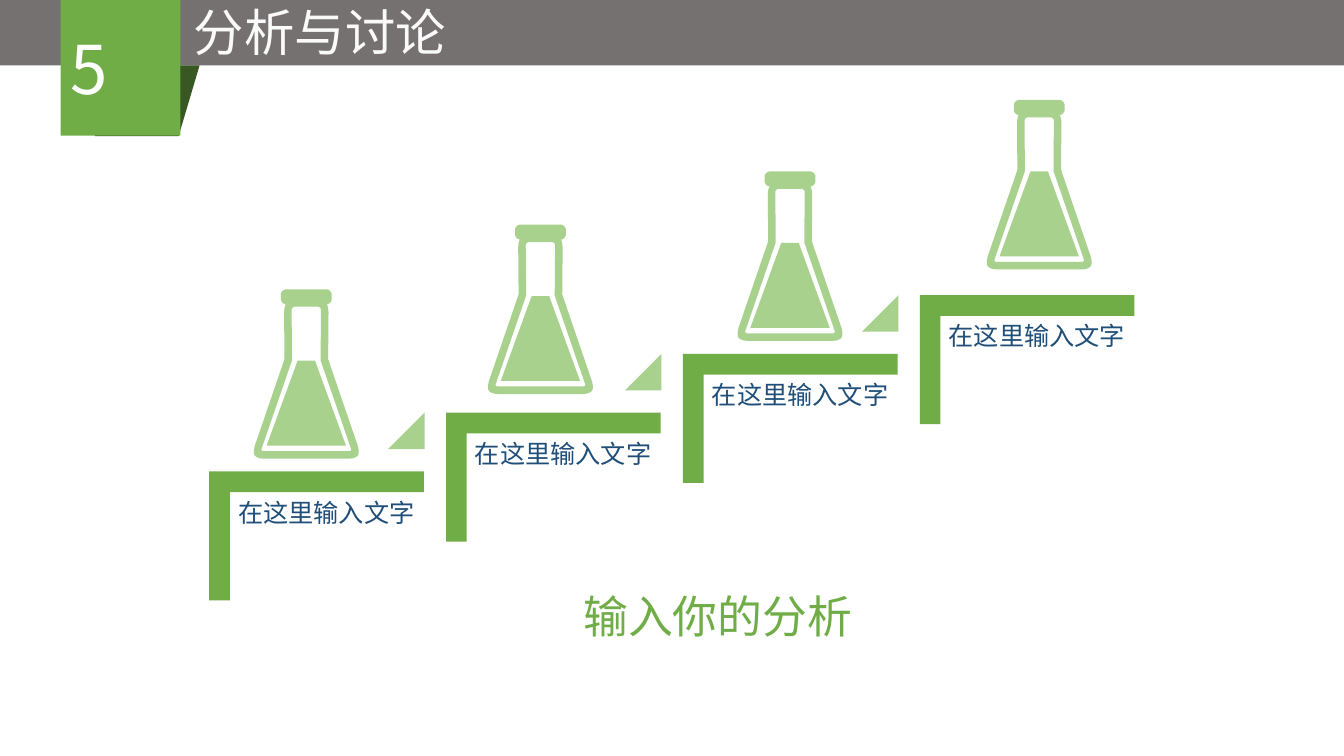
"""Build the "分析与讨论" slide with four rising steps, each carrying a flask."""
from pptx import Presentation
from pptx.dml.color import RGBColor
from pptx.enum.shapes import MSO_SHAPE
from pptx.enum.text import MSO_ANCHOR, MSO_AUTO_SIZE, PP_ALIGN
from pptx.oxml.xmlchemy import OxmlElement
from pptx.util import Cm, Pt

GREY = RGBColor(0x76, 0x71, 0x71)
GREEN = RGBColor(0x70, 0xAD, 0x47)
LIGHT_GREEN = RGBColor(0xA9, 0xD1, 0x8E)
DARK_GREEN = RGBColor(0x38, 0x57, 0x23)
NAVY = RGBColor(0x1F, 0x4E, 0x79)
OFF_WHITE = RGBColor(0xFA, 0xFA, 0xFA)
WHITE = RGBColor(0xFF, 0xFF, 0xFF)

FONT = "Noto Sans CJK SC"
STEP_RUN, STEP_RISE = 5.97, 1.48
STEP_LABELS = ["在这里输入文字"] * 4
FLASK_CORNERS = [(6.38, 7.29), (12.28, 5.66), (18.57, 4.32), (24.85, 2.52)]

FLASK_WIDTH = 268
GLASS_OUTSIDE = [(190, 27, 30), (189, 176, 0), (275, 427, 34)]
GLASS_INSIDE = [(171, 44, 10), (170, 179, 0), (249, 408, 8)]
STOPPER = [(198, 0, 16), (198, 38, 16)]
LIQUID = [(156, 180, 0), (234, 394, 0)]


def paint(shape, color):
    """Give a shape a plain fill without outline or shadow."""
    shape.shadow.inherit = False
    shape.fill.solid()
    shape.fill.fore_color.rgb = color
    shape.line.fill.background()


def add_block(slide, kind, left, top, width, height, color):
    """Add a painted preset shape, measured in centimetres."""
    shape = slide.shapes.add_shape(kind, Cm(left), Cm(top), Cm(width), Cm(height))
    paint(shape, color)
    return shape


def write(paragraph, text, size, color, alignment=PP_ALIGN.LEFT):
    """Add one formatted run to a paragraph."""
    paragraph.alignment = alignment
    run = paragraph.add_run()
    run.text = text
    run.font.size = Pt(size)
    run.font.color.rgb = color
    run.font.name = FONT
    east_asian = OxmlElement("a:ea")
    east_asian.set("typeface", FONT)
    run.font._element.append(east_asian)


def add_text_box(slide, left, top, width, height):
    """Add a wrapping text box and return its text frame."""
    box = slide.shapes.add_textbox(Cm(left), Cm(top), Cm(width), Cm(height))
    box.text_frame.word_wrap = True
    return box.text_frame


def toward(start, end, distance):
    """Return the point at a distance from start on the way to end."""
    span_x, span_y = end[0] - start[0], end[1] - start[1]
    share = distance / (span_x ** 2 + span_y ** 2) ** 0.5
    return start[0] + span_x * share, start[1] + span_y * share


def rounded_outline(right_half):
    """Mirror the right half of an outline and round its corners."""
    left_half = [(FLASK_WIDTH - x, y, radius) for x, y, radius in reversed(right_half)]
    corners = right_half + left_half
    points = []
    for index, corner in enumerate(corners):
        radius = corner[2]
        if not radius:
            points.append(corner[:2])
            continue
        entry = toward(corner, corners[index - 1], radius)
        leave = toward(corner, corners[(index + 1) % len(corners)], radius)
        for step in range(7):
            t = step / 6
            points.append(tuple(
                (1 - t) ** 2 * entry[axis] + 2 * t * (1 - t) * corner[axis] + t ** 2 * leave[axis]
                for axis in (0, 1)))
    return points


def add_outline(slide, left, top, *contours):
    """Draw closed contours, given in hundredths of a centimetre, as one shape."""
    first, *others = [rounded_outline(contour) for contour in contours]
    builder = slide.shapes.build_freeform(*first[0], scale=Cm(0.01))
    builder.add_line_segments(first[1:], close=True)
    for points in others:
        builder.move_to(*points[0])
        builder.add_line_segments(points[1:], close=True)
    paint(builder.convert_to_shape(Cm(left), Cm(top)), LIGHT_GREEN)


def add_flask(slide, left, top):
    """Draw a flask from glass, stopper and liquid."""
    add_outline(slide, left, top, GLASS_OUTSIDE, GLASS_INSIDE)
    add_outline(slide, left, top, STOPPER)
    add_outline(slide, left, top, LIQUID)


def add_step(slide, index, label):
    """Add one stair step with its label."""
    right, up = index * STEP_RUN, index * STEP_RISE
    stair = add_block(slide, MSO_SHAPE.CORNER, 6.35 + right, 10.8 - up, 3.25, 5.41, GREEN)
    stair.rotation = 90
    stair.adjustments[0] = stair.adjustments[1] = 0.16
    frame = add_text_box(slide, 5.82 + right, 12.43 - up, 4.88, 4.27)
    frame.margin_left = frame.margin_right = Cm(0.18)
    frame.margin_top = frame.margin_bottom = Cm(0.18)
    paragraph = frame.paragraphs[0]
    paragraph.line_spacing = 0.9
    write(paragraph, label, 18, NAVY)


def add_rise_marker(slide, index):
    """Add the small triangle that leads up to the next step."""
    marker = add_block(slide, MSO_SHAPE.ISOSCELES_TRIANGLE, 9.78 + index * STEP_RUN,
                       10.4 - index * STEP_RISE, 0.92, 0.92, LIGHT_GREEN)
    marker.adjustments[0] = 1


def add_header(slide, heading):
    """Add the grey bar and put the title placeholder on it."""
    bar = add_block(slide, MSO_SHAPE.RECTANGLE, 0, -0.03, 33.87, 1.68, GREY)
    title = slide.shapes.title
    bar.element.addnext(title.element)
    title.left, title.top, title.width, title.height = Cm(3.73), Cm(-0.1), Cm(8.66), Cm(1.78)
    frame = title.text_frame
    frame.auto_size = MSO_AUTO_SIZE.SHAPE_TO_FIT_TEXT
    frame.vertical_anchor = MSO_ANCHOR.TOP
    write(frame.paragraphs[0], heading, 36, OFF_WHITE, PP_ALIGN.CENTER)


def add_section_tag(slide, number):
    """Add the folded green tag with the section number."""
    add_block(slide, MSO_SHAPE.FLOWCHART_DATA, 2.39, 1.65, 2.64, 1.78, DARK_GREEN)
    tag = add_block(slide, MSO_SHAPE.RECTANGLE, 1.53, -0.03, 3.02, 3.45, GREEN)
    tag.text_frame.vertical_anchor = MSO_ANCHOR.MIDDLE
    write(tag.text_frame.paragraphs[0], number, 48, WHITE)


def main():
    """Build and save the slide."""
    presentation = Presentation()
    presentation.slide_width, presentation.slide_height = Cm(33.87), Cm(19.05)
    slide = presentation.slides.add_slide(presentation.slide_layouts[5])
    add_header(slide, "分析与讨论")
    for index, label in enumerate(STEP_LABELS):
        add_step(slide, index, label)
        if index < len(STEP_LABELS) - 1:
            add_rise_marker(slide, index)
    frame = add_text_box(slide, 14.45, 14.71, 18.14, 1.6)
    frame.auto_size = MSO_AUTO_SIZE.SHAPE_TO_FIT_TEXT
    write(frame.paragraphs[0], "输入你的分析", 32, GREEN)
    for left, top in FLASK_CORNERS:
        add_flask(slide, left, top)
    add_section_tag(slide, "5")
    presentation.save("out.pptx")


if __name__ == "__main__":
    main()
